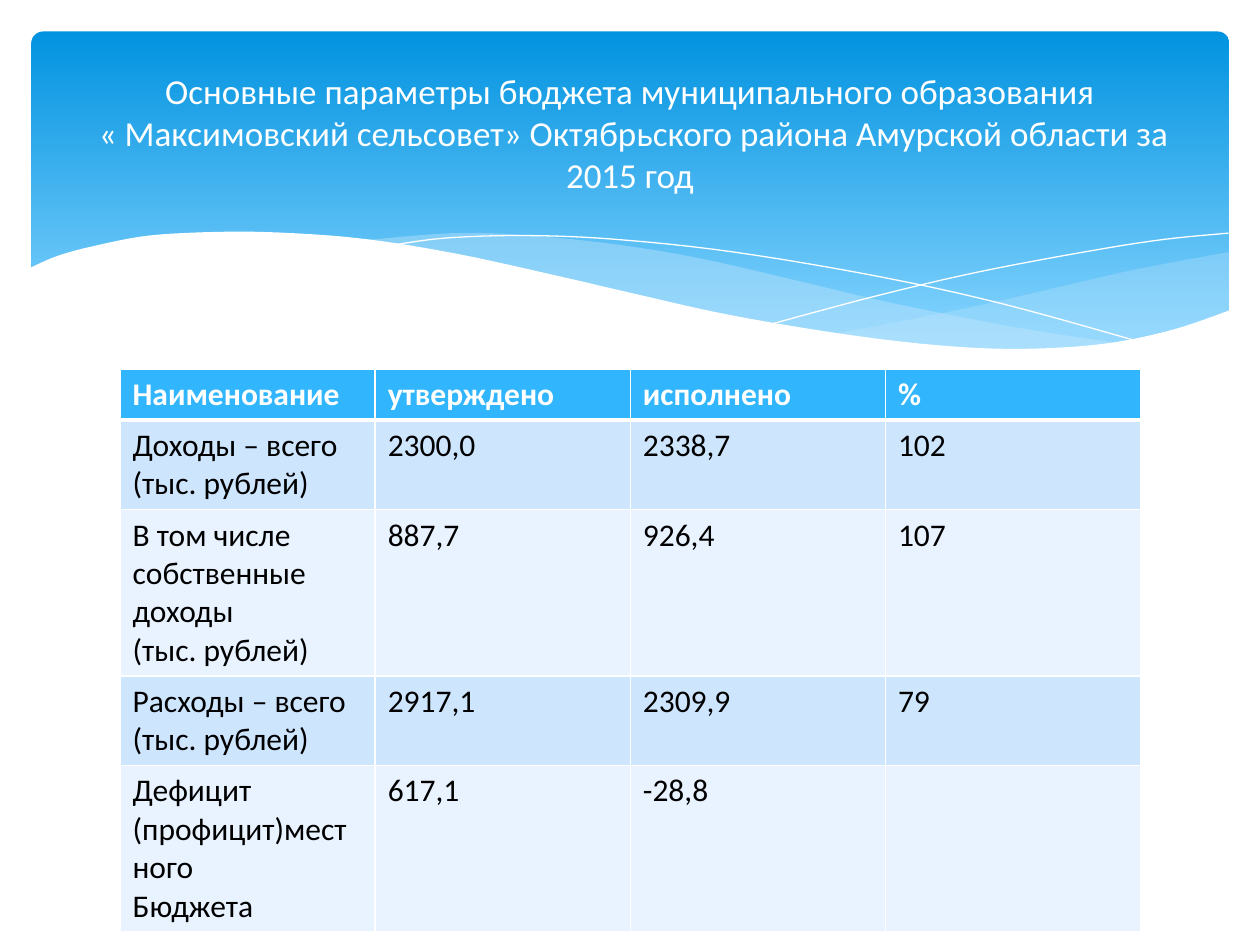
"""Build the municipal budget summary slide with a wave banner and a table."""

import dataclasses
import typing

import lxml.etree
import pptx
import pptx.dml.color
import pptx.enum.shapes
import pptx.enum.text
import pptx.oxml.ns
import pptx.util

Pt = pptx.util.Pt
qn = pptx.oxml.ns.qn
Point = tuple[float, float]


@dataclasses.dataclass(frozen=True)
class Theme:
    white: str = "FFFFFF"
    black: str = "000000"
    banner_top: str = "0293E0"
    banner_bottom: str = "83D3FE"
    wave: str = "C6E7FC"
    header: str = "31B6FD"
    bands: tuple[str, str] = ("CEE5FE", "E8F3FF")
    font: str = "Calibri"
    title_size: float = 20
    table_size: float = 18
    border: float = 1
    header_border: float = 3


@dataclasses.dataclass(frozen=True)
class Wave:
    edges: list[list[Point]]
    fill: str | None = None
    opacity: int = 100
    corners: tuple[Point, ...] = ()


THEME = Theme()

WAVES = [
    Wave([[(702.5, 144), (652, 153.4), (620, 160.6), (561, 174.2), (508, 185), (476, 190.8)],
          [(476, 190.8), (517.7, 195.8), (578, 200), (634, 196.6), (673, 188.6), (702.5, 177.8)]],
         THEME.wave, 29),
    Wave([[(643, 196.6), (581, 187.2), (508, 172.8), (453, 159.8), (399.6, 147.6),
           (352, 139.7), (302.4, 134.6), (260, 133.2), (206, 137.5)],
          [(206, 137.5), (260.6, 146.2), (323.3, 159.8), (407.5, 178.6), (478.8, 191.5),
           (538.6, 198.7), (589, 200.2), (643, 196.6)]],
         THEME.wave, 40),
    Wave([[(222.5, 140.4), (254, 136.1), (299.5, 134.6), (352, 136.8), (419, 144),
           (500.4, 157.7), (572.4, 173.5), (653, 195.8)]]),
    Wave([[(441.4, 185), (500.4, 169.2), (558.7, 155.5), (623.5, 143.3), (665.3, 136.8),
           (702, 133.2)]]),
    Wave([[(703.5, 177.1), (669.6, 188.6), (630, 196.6), (582.5, 199.4), (535.7, 197.3),
           (481, 190.8), (416.9, 180), (362.2, 167.8), (321.8, 158.4), (262.8, 145.4),
           (210.2, 136.8), (165.6, 133.2), (127.4, 132.5), (85.7, 134.6), (54.7, 140.4),
           (33.1, 146.2), (16.6, 153.4)]],
         THEME.white, corners=((16.6, 236.9), (703.5, 236.9))),
]

TITLE = ("Основные параметры бюджета муниципального образования\v"
         " « Максимовский сельсовет» Октябрьского района Амурской области за 2015 год")

BUDGET = [
    ("Наименование", "утверждено", "исполнено", "%"),
    ("Доходы – всего\n(тыс. рублей)", "2300,0", "2338,7", "102"),
    ("В том числе\nсобственные доходы\n(тыс. рублей)", "887,7", "926,4", "107"),
    ("Расходы – всего\n(тыс. рублей)", "2917,1", "2309,9", "79"),
    ("Дефицит (профицит)местного\nБюджета", "617,1", "-28,8", ""),
]


def rgb(value: str) -> pptx.dml.color.RGBColor:
    return pptx.dml.color.RGBColor.from_string(value)


def apply_format(target: typing.Any, values: dict[str, typing.Any]) -> None:
    for name, value in values.items():
        setattr(target, name, value)


def style_text(frame: typing.Any, size: float, color: str, **font_values: typing.Any) -> None:
    for paragraph in frame.paragraphs:
        for run in paragraph.runs:
            apply_format(run.font, {"name": THEME.font, "size": Pt(size), **font_values})
            run.font.color.rgb = rgb(color)


def smooth(knots: list[Point], steps: int = 6) -> list[Point]:
    padded = [knots[0], *knots, knots[-1]]
    curve = [knots[0]]
    for a, b, c, d in zip(padded, padded[1:], padded[2:], padded[3:]):
        for step in range(1, steps + 1):
            t = step / steps
            curve.append(tuple(
                (2 * q + (r - p) * t + (2 * p - 5 * q + 4 * r - s) * t ** 2
                 + (3 * q - p - 3 * r + s) * t ** 3) / 2
                for p, q, r, s in zip(a, b, c, d)))
    return curve


def draw_banner(shapes: typing.Any) -> None:
    banner = shapes.add_shape(pptx.enum.shapes.MSO_SHAPE.ROUNDED_RECTANGLE,
                              Pt(18), Pt(18), Pt(684.5), Pt(194.4))
    banner.adjustments[0] = 0.034
    banner.shadow.inherit = False
    banner.line.fill.background()
    banner.fill.gradient()
    banner.fill.gradient_angle = 270
    stops = ((0, THEME.banner_top), (0.9, THEME.banner_bottom))
    for stop, (position, color) in zip(banner.fill.gradient_stops, stops):
        stop.position = position
        stop.color.rgb = rgb(color)


def draw_wave(shapes: typing.Any, wave: Wave) -> None:
    outline = [point for edge in wave.edges for point in smooth(edge)] + list(wave.corners)
    start, *rest = [(Pt(x), Pt(y)) for x, y in outline]
    builder = shapes.build_freeform(*start)
    builder.add_line_segments(rest, close=wave.fill is not None)
    shape = builder.convert_to_shape()
    shape.shadow.inherit = False
    if wave.fill is None:
        shape.fill.background()
        shape.line.color.rgb = rgb(THEME.white)
        shape.line.width = Pt(0)
        return
    shape.line.fill.background()
    shape.fill.solid()
    shape.fill.fore_color.rgb = rgb(wave.fill)
    if wave.opacity < 100:
        color = shape.element.spPr.find(f"{qn('a:solidFill')}/{qn('a:srgbClr')}")
        lxml.etree.SubElement(color, qn("a:alpha"), val=str(wave.opacity * 1000))


def draw_borders(cell: typing.Any, widths: dict[str, float]) -> None:
    properties = cell._tc.get_or_add_tcPr()
    for index, (side, width) in enumerate(widths.items()):
        line = lxml.etree.Element(qn(f"a:ln{side}"), w=str(Pt(width)))
        fill = lxml.etree.SubElement(line, qn("a:solidFill"))
        lxml.etree.SubElement(fill, qn("a:srgbClr"), val=THEME.white)
        properties.insert(index, line)


def draw_table(shapes: typing.Any, rows: list[tuple[str, ...]]) -> None:
    columns = len(rows[0])
    table = shapes.add_table(len(rows), columns, Pt(68.6), Pt(210.9),
                             Pt(583.2), Pt(29.2 * len(rows))).table
    for row, texts in enumerate(rows):
        is_header = row == 0
        fill = THEME.header if is_header else THEME.bands[(row - 1) % 2]
        borders = dict.fromkeys("LRTB", THEME.border)
        if row < 2:
            borders["B" if is_header else "T"] = THEME.header_border
        for column, text in enumerate(texts):
            cell = table.cell(row, column)
            cell.text = text
            cell.fill.solid()
            cell.fill.fore_color.rgb = rgb(fill)
            style_text(cell.text_frame, THEME.table_size,
                       THEME.white if is_header else THEME.black, bold=is_header)
            draw_borders(cell, borders)


def draw_title(shapes: typing.Any, text: str) -> None:
    frame = shapes.add_textbox(Pt(36), Pt(26.6), Pt(648), Pt(98.6)).text_frame
    apply_format(frame, {"text": text, "word_wrap": True,
                         "vertical_anchor": pptx.enum.text.MSO_ANCHOR.MIDDLE})
    frame.paragraphs[0].alignment = pptx.enum.text.PP_ALIGN.CENTER
    style_text(frame, THEME.title_size, THEME.white)


def main() -> None:
    presentation = pptx.Presentation()
    apply_format(presentation, {"slide_width": Pt(720), "slide_height": Pt(540)})
    shapes = presentation.slides.add_slide(presentation.slide_layouts[6]).shapes
    draw_banner(shapes)
    for wave in WAVES:
        draw_wave(shapes, wave)
    draw_table(shapes, BUDGET)
    draw_title(shapes, TITLE)
    presentation.save("out.pptx")


if __name__ == "__main__":
    main()
